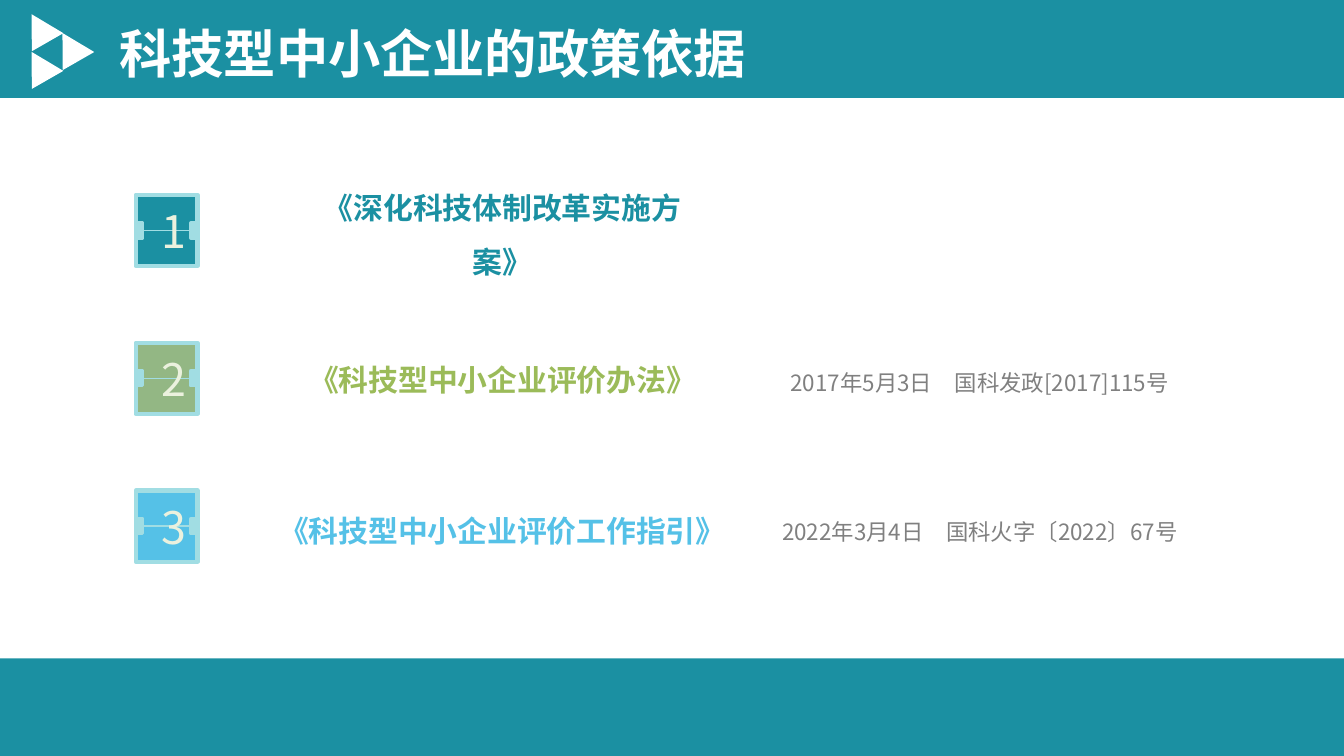
import pptx
import pptx.util
import pptx.dml.color
import pptx.enum.shapes
import pptx.enum.text
import pptx.oxml.ns
from lxml import etree

Inches, Pt = pptx.util.Inches, pptx.util.Pt
SHAPES = pptx.enum.shapes.MSO_SHAPE
ALIGN = pptx.enum.text.PP_ALIGN
ANCHOR = pptx.enum.text.MSO_ANCHOR
qn = pptx.oxml.ns.qn

# Content
HEADING = "科技型中小企业的政策依据"
# Each policy: name, name colour, name box, anchor, tile colour
POLICIES = [
    ("《深化科技体制改革实施方案》", "1B90A2", (2.19, 1.45, 3.1, 0.46), ANCHOR.MIDDLE, "1B90A2"),
    ("《科技型中小企业评价办法》", "9BBB59", (2.19, 2.53, 3.1, 0.46), ANCHOR.MIDDLE, "93B784"),
    ("《科技型中小企业评价工作指引》", "55C1E7", (1.87, 3.63, 3.74, 0.46), ANCHOR.TOP, "55C1E7"),
]
# Each issue note: text, box, space before
ISSUES = [
    ("2017年5月3日　国科发政[2017]115号", (5.74, 2.6, 3.1, 0.4), 7),
    ("2022年3月4日　国科火字〔2022〕67号", (5.59, 3.71, 3.4, 0.37), 0),
]

# Style
FONT = "Noto Sans CJK SC"
TEAL, WHITE, TRIM = "1B90A2", "FFFFFF", "A1DDE3"
NUMBER = {"size": Pt(24), "bold": False}
NAME = {"size": Pt(16), "bold": True}
NOTE = {"size": Pt(12), "bold": False}
TITLE = {"size": Pt(28), "bold": True}
TILE_LEFT, TILE_TOP, TILE_W, TILE_H, PITCH = 1.01, 1.45, 0.46, 0.53, 1.1
TAB_W, TAB_H, TAB_DROP = 0.05, 0.11, 0.21


def rgb(code):
    return pptx.dml.color.RGBColor.from_string(code)


def place(box):
    return [Inches(value) for value in box]


def add_block(kind, box, fill, line_width=0):
    block = slide.shapes.add_shape(kind, *place(box))
    block.shadow.inherit = False
    block.fill.solid()
    block.fill.fore_color.rgb = rgb(fill)
    if line_width:
        block.line.color.rgb = rgb(TRIM)
        block.line.width = Pt(line_width)
    else:
        block.line.fill.background()
    return block


def write(holder, text, color, font_format, paragraph_format, frame_format):
    frame = holder.text_frame
    paragraph = frame.paragraphs[0]
    run = paragraph.add_run()
    run.text = text
    run.font.name = FONT
    run.font.color.rgb = rgb(color)
    frame_format = {"word_wrap": True, "vertical_anchor": ANCHOR.TOP,
                    "auto_size": pptx.enum.text.MSO_AUTO_SIZE.SHAPE_TO_FIT_TEXT,
                    **frame_format}
    for target, settings in ((run.font, font_format),
                             (paragraph, paragraph_format),
                             (frame, frame_format)):
        for key, value in settings.items():
            setattr(target, key, value)
    # East Asian typeface
    etree.SubElement(run.font._element, qn("a:ea"), typeface=FONT)


def add_text(box, text, color, font_format, space_before=0, line_spacing=1.0, anchor=ANCHOR.TOP):
    write(slide.shapes.add_textbox(*place(box)), text, color, font_format,
          {"alignment": ALIGN.CENTER, "line_spacing": line_spacing,
           "space_before": Pt(space_before)},
          {"vertical_anchor": anchor})


def add_tile(number, top, fill):
    tile = add_block(SHAPES.ROUNDED_RECTANGLE, (TILE_LEFT, top, TILE_W, TILE_H), fill, 2.25)
    tile.adjustments[0] = 0
    inner_left, inner_right = TILE_LEFT + TAB_W, TILE_LEFT + TILE_W - TAB_W
    for tab_left in (TILE_LEFT, inner_right):
        add_block(SHAPES.RECTANGLE, (tab_left, top + TAB_DROP, TAB_W, TAB_H), TRIM, 2)
    middle = top + TAB_DROP + TAB_H / 2
    hinge = slide.shapes.add_connector(pptx.enum.shapes.MSO_CONNECTOR.STRAIGHT,
                                       *place((inner_left, middle, inner_right, middle)))
    hinge.line.color.rgb = rgb(TRIM)
    hinge.line.width = Pt(0.75)
    etree.SubElement(hinge._element.spPr, qn("a:effectLst"))
    add_text((1.1, top + 0.02, 0.28, 0.26), str(number), "EBF1DE", NUMBER)


# Widescreen 16:9 page
deck = pptx.Presentation()
deck.slide_width = Inches(10)
deck.slide_height = deck.slide_width * 9 // 16
slide = deck.slides.add_slide(deck.slide_layouts[5])

# Teal background with white content band
slide.background.fill.solid()
slide.background.fill.fore_color.rgb = rgb(TEAL)
add_block(SHAPES.RECTANGLE, (0, 0.73, 10, 4.17), WHITE)

# Numbered policies
for index, (name, color, box, anchor, fill) in enumerate(POLICIES):
    add_tile(index + 1, TILE_TOP + index * PITCH, fill)
    add_text(box, name, color, NAME, 7, 1.5, anchor)

# Issue dates and document numbers
for note, box, space_before in ISSUES:
    add_text(box, note, "808080", NOTE, space_before, 1.5)

# Heading
heading = slide.shapes.title
heading.left, heading.top, heading.width, heading.height = place((0.79, 0.11, 4.91, 0.57))
write(heading, HEADING, WHITE, TITLE, {"alignment": ALIGN.LEFT}, {"word_wrap": False})

# Triangles beside the heading
for left, top in ((0.16, 0.09), (0.16, 0.37), (0.39, 0.23)):
    add_block(SHAPES.ISOSCELES_TRIANGLE, (left, top, 0.27, 0.24), WHITE).rotation = 330.2

deck.save("out.pptx")
